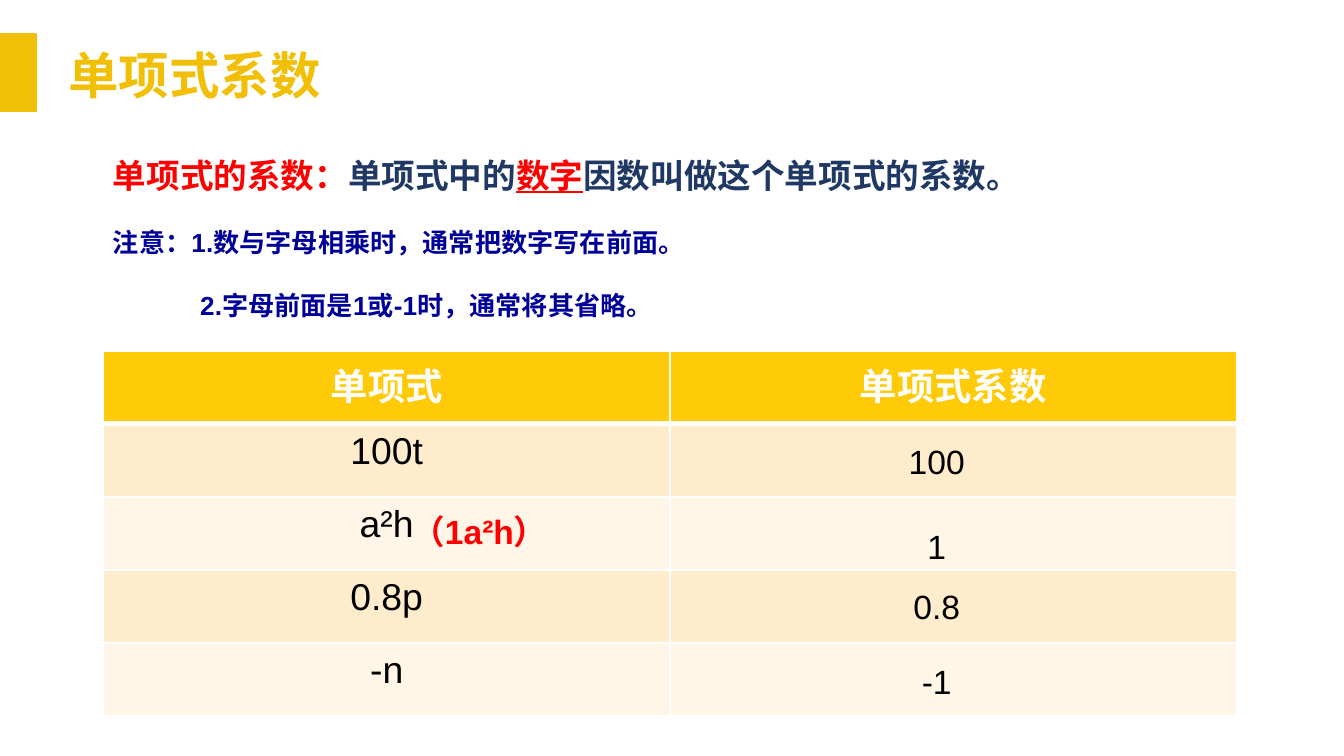
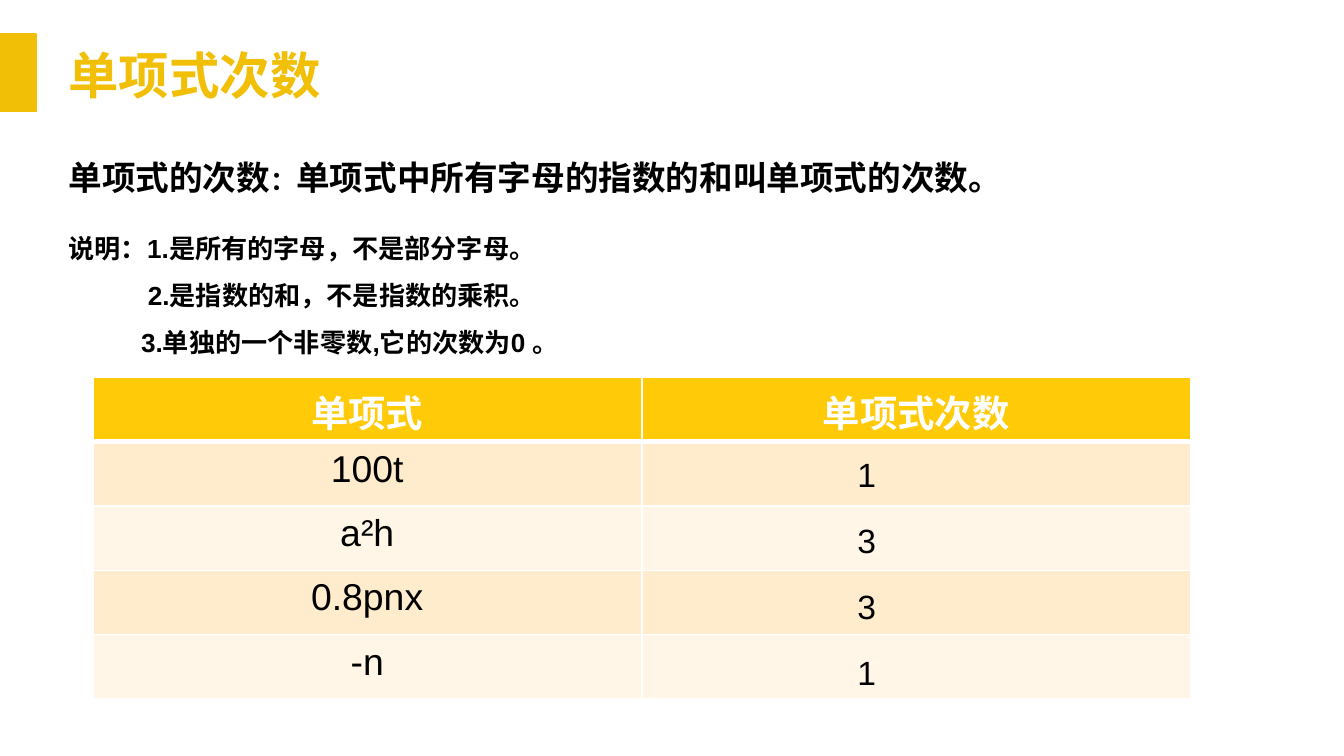
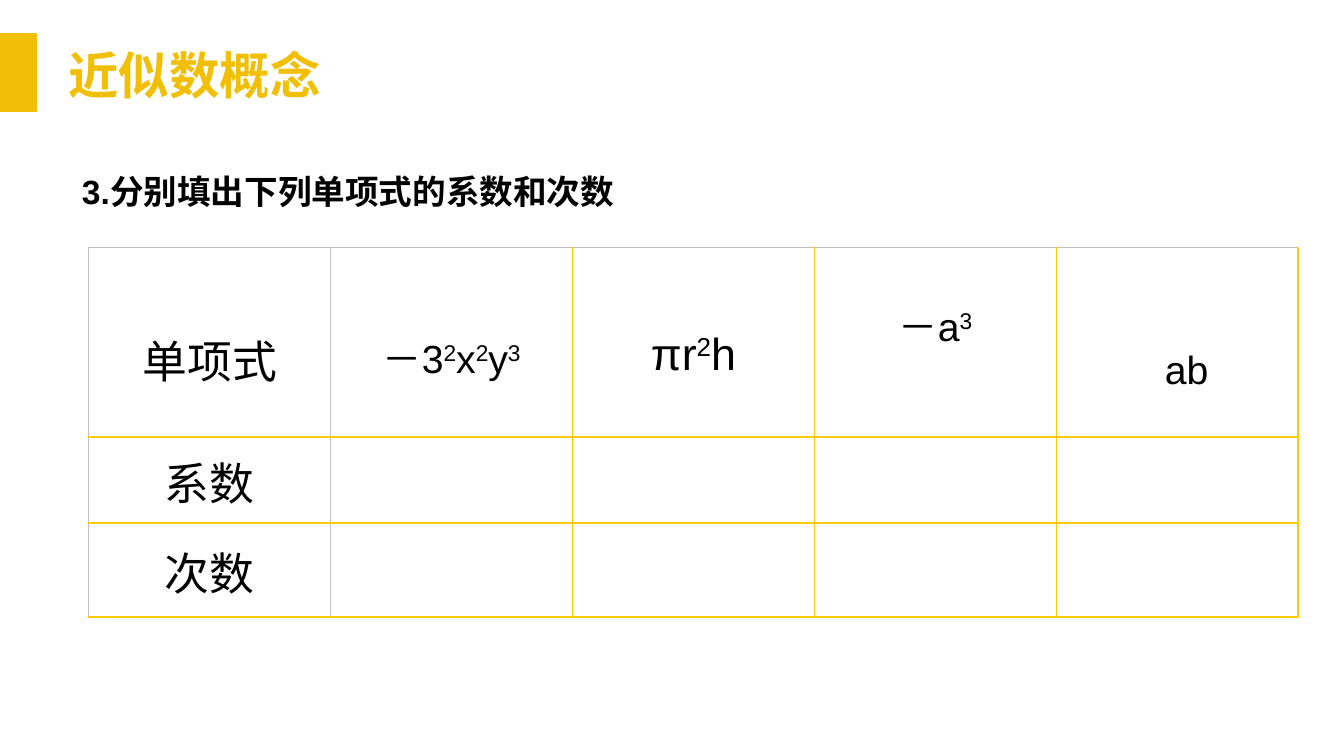
"""Build three lesson pages on the coefficient and degree of monomials."""
import lxml.etree
import pptx
import pptx.dml.color
import pptx.enum.shapes
import pptx.enum.text
import pptx.oxml.ns
import pptx.util

Inches = pptx.util.Inches
ALIGN = pptx.enum.text.PP_ALIGN
ANCHOR = pptx.enum.text.MSO_ANCHOR
FONT = "Arial"
COLORS = {
    "accent": "F1BF06",
    "header": "FFCA08",
    "band_dark": "FFECCC",
    "band_light": "FFF6E7",
    "white": "FFFFFF",
    "black": "000000",
    "red": "FF0000",
    "navy": "203864",
    "blue": "000099",
    "grey": "BFBFBF",
}


def rgb(name):
    """Return the named colour."""
    return pptx.dml.color.RGBColor.from_string(COLORS[name])


def add_span(para, text, size, color="black", bold=False, underline=False, raised=False):
    """Append one formatted run to a paragraph."""
    span = para.add_run()
    span.text = text
    font = span.font
    font.name, font.size, font.bold = FONT, pptx.util.Pt(size), bold
    font.color.rgb = rgb(color)
    if underline:
        font.underline = True
    properties = font._element
    if raised:
        properties.set("baseline", "30000")
    east_asian = lxml.etree.SubElement(properties, pptx.oxml.ns.qn("a:ea"))
    east_asian.set("typeface", FONT)


def add_text(page, left, top, width, height, lines, align=None, spacing=None,
             anchor=ANCHOR.TOP, grow=True):
    """Add a text box; each line is an indent in inches and a list of spans."""
    box = page.shapes.add_textbox(Inches(left), Inches(top), Inches(width), Inches(height))
    frame = box.text_frame
    frame.word_wrap = True
    frame.vertical_anchor = anchor
    frame.margin_left = frame.margin_right = Inches(0.07)
    frame.margin_top = frame.margin_bottom = Inches(0.04)
    if grow:
        frame.auto_size = pptx.enum.text.MSO_AUTO_SIZE.SHAPE_TO_FIT_TEXT
    for index, (indent, spans) in enumerate(lines):
        para = frame.add_paragraph() if index else frame.paragraphs[0]
        para.alignment, para.line_spacing = align, spacing
        if indent:
            properties = para._p.get_or_add_pPr()
            properties.set("marL", str(Inches(indent)))
            properties.set("indent", "0")
        for text, style in spans:
            add_span(para, text, **style)


def add_page(deck, title):
    """Add a blank page with the side bar and its title."""
    page = deck.slides.add_slide(deck.slide_layouts[6])
    bar = page.shapes.add_shape(pptx.enum.shapes.MSO_SHAPE.RECTANGLE,
                                0, Inches(0.25), Inches(0.27), Inches(0.58))
    bar.shadow.inherit = False
    bar.fill.solid()
    bar.fill.fore_color.rgb = rgb("accent")
    bar.line.color.rgb = rgb("accent")
    bar.line.width = pptx.util.Pt(1)
    style = dict(size=27, color="accent", bold=True)
    add_text(page, 0.44, 0.29, 2.85, 0.53, [(0, [(title, style)])])
    return page


def set_borders(cell, **sides):
    """Draw cell borders given as L, R, T, B pairs of colour and points."""
    properties = cell._tc.get_or_add_tcPr()
    for index, side in enumerate("LRTB"):
        color, points = sides[side]
        line = lxml.etree.Element(pptx.oxml.ns.qn(f"a:ln{side}"), w=str(pptx.util.Pt(points)))
        fill = lxml.etree.SubElement(line, pptx.oxml.ns.qn("a:solidFill"))
        lxml.etree.SubElement(fill, pptx.oxml.ns.qn("a:srgbClr"), val=COLORS[color])
        properties.insert(index, line)


def add_grid(page, left, top, width, heights, columns):
    """Add an unstyled table with equal columns and the given row heights."""
    table = page.shapes.add_table(len(heights), columns, Inches(left), Inches(top),
                                  Inches(width), Inches(sum(heights))).table
    table.first_row = table.horz_banding = False
    for row, height in zip(table.rows, heights):
        row.height = Inches(height)
    return table


def add_banded_table(page, left, top, width, height, headings, terms):
    """Add a two-column table with a header, bands and an empty answer column."""
    rows = [headings] + [(term, "") for term in terms]
    table = add_grid(page, left, top, width, [height / len(rows)] * len(rows), 2)
    for r, texts in enumerate(rows):
        fill = "header" if r == 0 else ("band_light", "band_dark")[r % 2]
        for c, text in enumerate(texts):
            cell = table.cell(r, c)
            cell.fill.solid()
            cell.fill.fore_color.rgb = rgb(fill)
            thin, thick = ("white", 1), ("white", 3)
            set_borders(cell, L=thin, R=thin, T=thick if r == 1 else thin,
                        B=thick if r == 0 else thin)
            if r == 0:
                cell.margin_top, cell.margin_bottom = Inches(0.12), 0
            if text:
                para = cell.text_frame.paragraphs[0]
                para.alignment = ALIGN.CENTER
                add_span(para, text, 20, "black" if r else "white", bold=r == 0)


def add_answers(page, left, answers, align=None):
    """Place the answers, each at its own top, over the answer column."""
    for top, answer in answers:
        add_text(page, left, top, 1.04, 0.38, [(0, [(answer, dict(size=18))])], align)


def add_exercise_table(page):
    """Add the table of monomials whose coefficients and degrees are to be filled in."""
    terms = [
        (24, 0.17, 0.05, ["单项式"]),
        (21, 0.15, 0.05, ["－3", "2", "x", "2", "y", "3"]),
        (24, 0.05, 0.05, ["πr", "2", "h"]),
        (21, 0.05, 0.43, ["－a", "3"]),
        (21, 0.05, 0.05, ["ab"]),
    ]
    table = add_grid(page, 0.66, 1.84, 9, [1.41, 0.64, 0.7], len(terms))
    for r in range(3):
        for c in range(len(terms)):
            cell = table.cell(r, c)
            cell.fill.background()
            cell.vertical_anchor = ANCHOR.MIDDLE
            grey, gold = ("grey", 0.75), ("header", 1)
            set_borders(cell, L=grey if c < 2 else gold, R=grey if c == 0 else gold,
                        T=grey if r == 0 else gold, B=gold)
    for c, (size, above, below, parts) in enumerate(terms):
        cell = table.cell(0, c)
        cell.margin_top, cell.margin_bottom = Inches(above), Inches(below)
        para = cell.text_frame.paragraphs[0]
        para.alignment, para.line_spacing = ALIGN.CENTER, 1.5
        if parts == ["ab"]:
            add_span(para, " ", 36)
        for index, part in enumerate(parts):
            add_span(para, part, size, raised=index % 2 == 1)
    for r, label in enumerate(("系数", "次数"), 1):
        cell = table.cell(r, 0)
        cell.margin_top, cell.margin_bottom = Inches(0.09), Inches(0.02)
        para = cell.text_frame.paragraphs[0]
        para.alignment = ALIGN.CENTER
        add_span(para, label, 24)


def build_coefficient_page(deck):
    """Build the page on the coefficient of a monomial."""
    page = add_page(deck, "单项式系数")
    key = dict(size=18, color="red", bold=True)
    body = dict(key, color="navy")
    note = dict(size=14, color="blue", bold=True)
    add_text(page, 0.77, 0.81, 9.06, 1.62, [
        (0, [("单项式的系数：", key), ("单项式中的", body),
             ("数字", dict(key, underline=True)), ("因数叫做这个单项式的系数。", body)]),
        (0, [("注意：1.数与字母相乘时，通常把数字写在前面。", note)]),
        (0.65, [("2.字母前面是1或-1时，通常将其省略。", note)]),
    ], spacing=2.0, anchor=ANCHOR.MIDDLE)
    add_banded_table(page, 0.77, 2.61, 8.43, 2.72, ("单项式", "单项式系数"),
                     ["100t", "a²h", "0.8p", "-n"])
    add_answers(page, 6.45, [(3.24, "100"), (3.87, "1"), (4.32, "0.8"), (4.88, "-1")],
                ALIGN.CENTER)
    add_text(page, 2.99, 3.76, 2.01, 0.38, [(0, [("（1a²h）", key)])])


def build_degree_page(deck):
    """Build the page on the degree of a monomial."""
    page = add_page(deck, "单项式次数")
    body = dict(size=18, bold=True)
    note = dict(size=14, bold=True)
    add_text(page, 0.44, 1.13, 9.56, 0.38, [
        (0, [("单项式的次数", body), ("：", note),
             ("单项式中所有字母的指数的和叫单项式的次数。", body)]),
    ], anchor=ANCHOR.MIDDLE)
    add_text(page, 0.44, 1.57, 8.43, 1.49, [
        (0, [("说明：1.是所有的字母，不是部分字母。", note)]),
        (0.59, [("2.是指数的和，不是指数的乘积。", note)]),
        (0.54, [("3.单独的一个非零数,它的次数为0 。", note)]),
    ], spacing=1.5)
    add_banded_table(page, 0.69, 2.81, 8.17, 2.39, ("单项式", "单项式次数"),
                     ["100t", "a²h", "0.8pnx", "-n"])
    add_answers(page, 6.31, [(3.34 + 0.49 * i, answer) for i, answer in enumerate("1331")])


def build_exercise_page(deck):
    """Build the page with the fill-in exercise."""
    page = add_page(deck, "近似数概念")
    task = ("3.分别填出下列单项式的系数和次数", dict(size=18, bold=True))
    add_text(page, 0.54, 1.08, 8.7, 0.49, [(0, [task])], spacing=1.5, grow=False)
    add_exercise_table(page)


def main():
    """Build and save the deck."""
    deck = pptx.Presentation()
    deck.slide_width, deck.slide_height = Inches(10), Inches(10 * 9 / 16)
    build_coefficient_page(deck)
    build_degree_page(deck)
    build_exercise_page(deck)
    deck.save("out.pptx")


if __name__ == "__main__":
    main()
